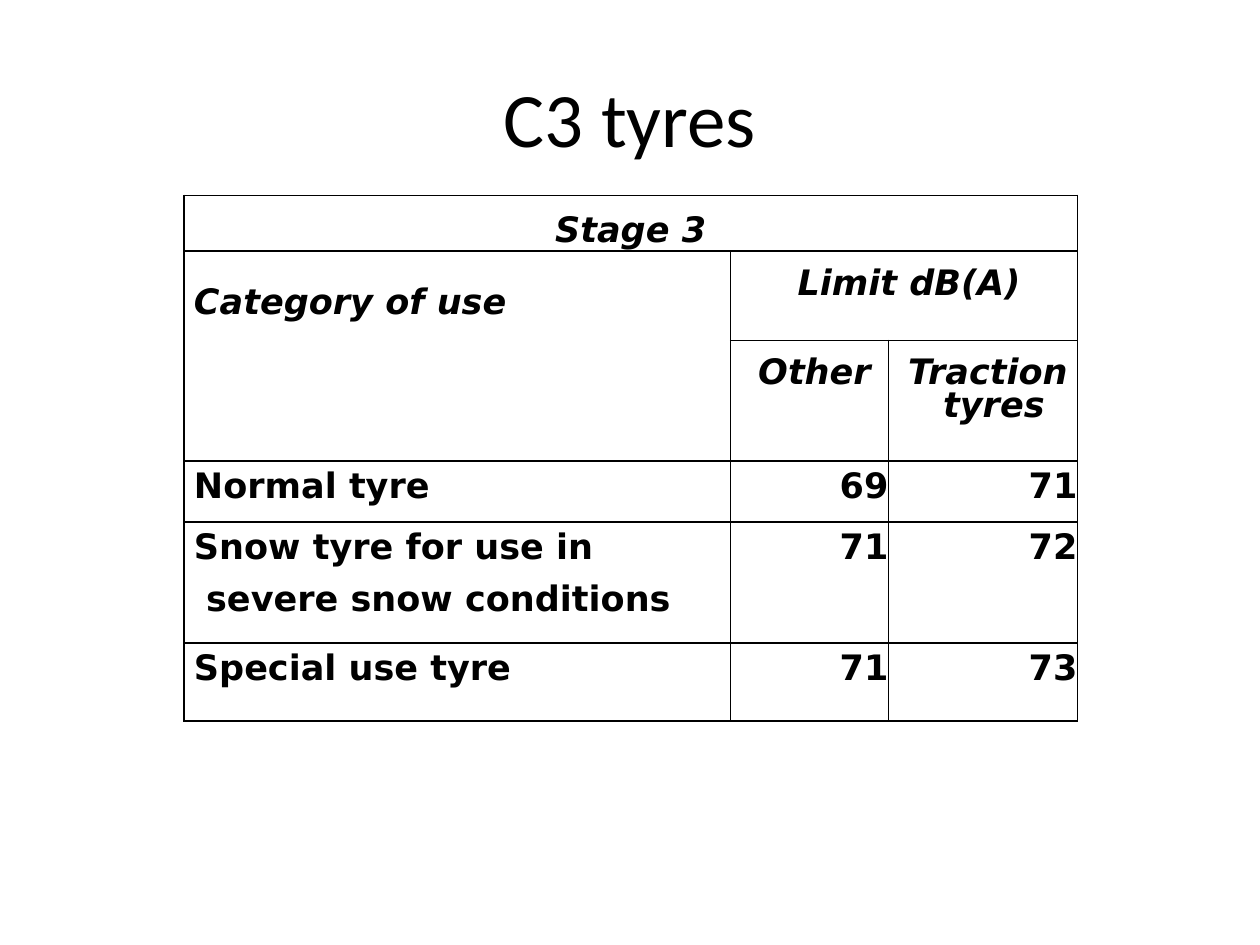
"""Build the slide with the stage 3 noise limits for C3 tyres."""
import dataclasses

import lxml.etree
import pptx
import pptx.dml.color
import pptx.enum.text
import pptx.oxml.ns
import pptx.table
import pptx.util

Cm = pptx.util.Cm
Pt = pptx.util.Pt
Align = pptx.enum.text.PP_ALIGN
Anchor = pptx.enum.text.MSO_ANCHOR


@dataclasses.dataclass(frozen=True)
class Theme:
    ink: str = "000000"
    title_font: str = "Calibri"
    title_size: float = 44
    table_font: str = "DejaVu Sans"
    table_size: float = 20
    thin_line: float = 1
    thick_line: float = 1.5


@dataclasses.dataclass(frozen=True)
class CellStyle:
    align: Align
    top: float
    after: float
    gap: float = 2
    leading: float = 11
    indent: float = 0.2
    italic: bool = True
    anchor: Anchor = Anchor.TOP


@dataclasses.dataclass(frozen=True)
class Entry:
    row: int
    column: int
    lines: tuple[str, ...]
    style: CellStyle
    row_span: int = 1
    column_span: int = 1


THEME = Theme()
STAGE = CellStyle(Align.CENTER, 0, 4, leading=10, indent=0, anchor=Anchor.BOTTOM)
CATEGORY = CellStyle(Align.JUSTIFY, 30, 6)
HEADING = CellStyle(Align.CENTER, 19, 6)
TYRE = CellStyle(Align.JUSTIFY, 15, 2, gap=17, italic=False)
LIMIT = CellStyle(Align.RIGHT, 15, 2, italic=False)

COLUMN_WIDTHS = (11.02, 3.18, 3.81)
ROW_HEIGHTS = (1.12, 1.8, 2.44, 1.22, 2.44, 1.57)
FIRST_LIMIT_ROW = 3
HEADINGS = (
    Entry(0, 0, ("Stage 3",), STAGE, column_span=3),
    Entry(1, 0, ("Category of use",), CATEGORY, row_span=2),
    Entry(1, 1, ("Limit dB(A)",), HEADING, column_span=2),
    Entry(2, 1, ("Other",), HEADING),
    Entry(2, 2, ("Traction", " tyres"), HEADING),
)
LIMITS = (
    (("Normal tyre",), "69", "71"),
    (("Snow tyre for use in", " severe snow conditions"), "71", "72"),
    (("Special use tyre",), "71", "73"),
)


def add_run(paragraph, text: str, font_name: str, size: float,
            bold: bool = False, italic: bool = False) -> None:
    """Add one run of text in the ink colour."""
    run = paragraph.add_run()
    run.text = text
    run.font.name = font_name
    run.font.size = Pt(size)
    run.font.bold = bold
    run.font.italic = italic
    run.font.color.rgb = pptx.dml.color.RGBColor.from_string(THEME.ink)


def add_title(slide, text: str) -> None:
    """Add the centred slide title."""
    box = slide.shapes.add_textbox(Cm(1.27), Cm(0.76), Cm(22.86), Cm(3.18))
    frame = box.text_frame
    frame.word_wrap = True
    frame.vertical_anchor = Anchor.MIDDLE
    paragraph = frame.paragraphs[0]
    paragraph.alignment = Align.CENTER
    add_run(paragraph, text, THEME.title_font, THEME.title_size)


def set_borders(cell: pptx.table._Cell, top: float, bottom: float) -> None:
    """Draw the four edges of a cell, with widths for top and bottom."""
    qualify = pptx.oxml.ns.qn
    properties = cell._tc.get_or_add_tcPr()
    widths = {"L": THEME.thin_line, "R": THEME.thin_line, "T": top, "B": bottom}
    for side, width in widths.items():
        line = lxml.etree.SubElement(properties, qualify(f"a:ln{side}"), w=str(int(Pt(width))))
        fill = lxml.etree.SubElement(line, qualify("a:solidFill"))
        lxml.etree.SubElement(fill, qualify("a:srgbClr"), val=THEME.ink)


def rule_grid(table: pptx.table.Table) -> None:
    """Clear every cell and rule it, with thick lines around the limits."""
    last_row = len(ROW_HEIGHTS) - 1
    for row_index, row in enumerate(table.rows):
        top = THEME.thick_line if row_index == FIRST_LIMIT_ROW else THEME.thin_line
        thick_bottom = row_index in (FIRST_LIMIT_ROW - 1, last_row)
        bottom = THEME.thick_line if thick_bottom else THEME.thin_line
        for cell in row.cells:
            cell.margin_left = cell.margin_right = cell.margin_top = cell.margin_bottom = 0
            set_borders(cell, top, bottom)
            cell.fill.background()


def fill_cell(table: pptx.table.Table, entry: Entry) -> None:
    """Merge the cells of an entry and write its lines."""
    style = entry.style
    cell = table.cell(entry.row, entry.column)
    if entry.row_span > 1 or entry.column_span > 1:
        cell.merge(table.cell(entry.row + entry.row_span - 1,
                              entry.column + entry.column_span - 1))
    cell.margin_top = Pt(style.top)
    cell.vertical_anchor = style.anchor
    frame = cell.text_frame
    for index, text in enumerate(entry.lines):
        paragraph = frame.add_paragraph() if index else frame.paragraphs[0]
        paragraph.alignment = style.align
        paragraph.line_spacing = Pt(style.leading)
        paragraph.space_before = Pt(style.gap if index else 0)
        paragraph.space_after = Pt(style.after)
        paragraph._p.get_or_add_pPr().set("marL", str(int(Cm(style.indent))))
        add_run(paragraph, text, THEME.table_font, THEME.table_size, True, style.italic)


def add_limit_table(slide) -> None:
    """Add the table of noise limits."""
    frame = slide.shapes.add_table(
        len(ROW_HEIGHTS), len(COLUMN_WIDTHS), Cm(3.71), Cm(3.94),
        Cm(sum(COLUMN_WIDTHS)), Cm(sum(ROW_HEIGHTS)))
    table = frame.table
    table.first_row = False
    table.horz_banding = False
    for column, width in zip(table.columns, COLUMN_WIDTHS):
        column.width = Cm(width)
    for row, height in zip(table.rows, ROW_HEIGHTS):
        row.height = Cm(height)
    rule_grid(table)
    for entry in HEADINGS:
        fill_cell(table, entry)
    for row_index, (tyre, *limits) in enumerate(LIMITS, FIRST_LIMIT_ROW):
        fill_cell(table, Entry(row_index, 0, tyre, TYRE))
        for column_index, limit in enumerate(limits, 1):
            fill_cell(table, Entry(row_index, column_index, (limit,), LIMIT))


def main() -> None:
    """Build and save the presentation."""
    presentation = pptx.Presentation()
    presentation.slide_width = Cm(25.4)
    presentation.slide_height = Cm(19.05)
    slide = presentation.slides.add_slide(presentation.slide_layouts[6])
    add_title(slide, "C3 tyres")
    add_limit_table(slide)
    presentation.save("out.pptx")


if __name__ == "__main__":
    main()
